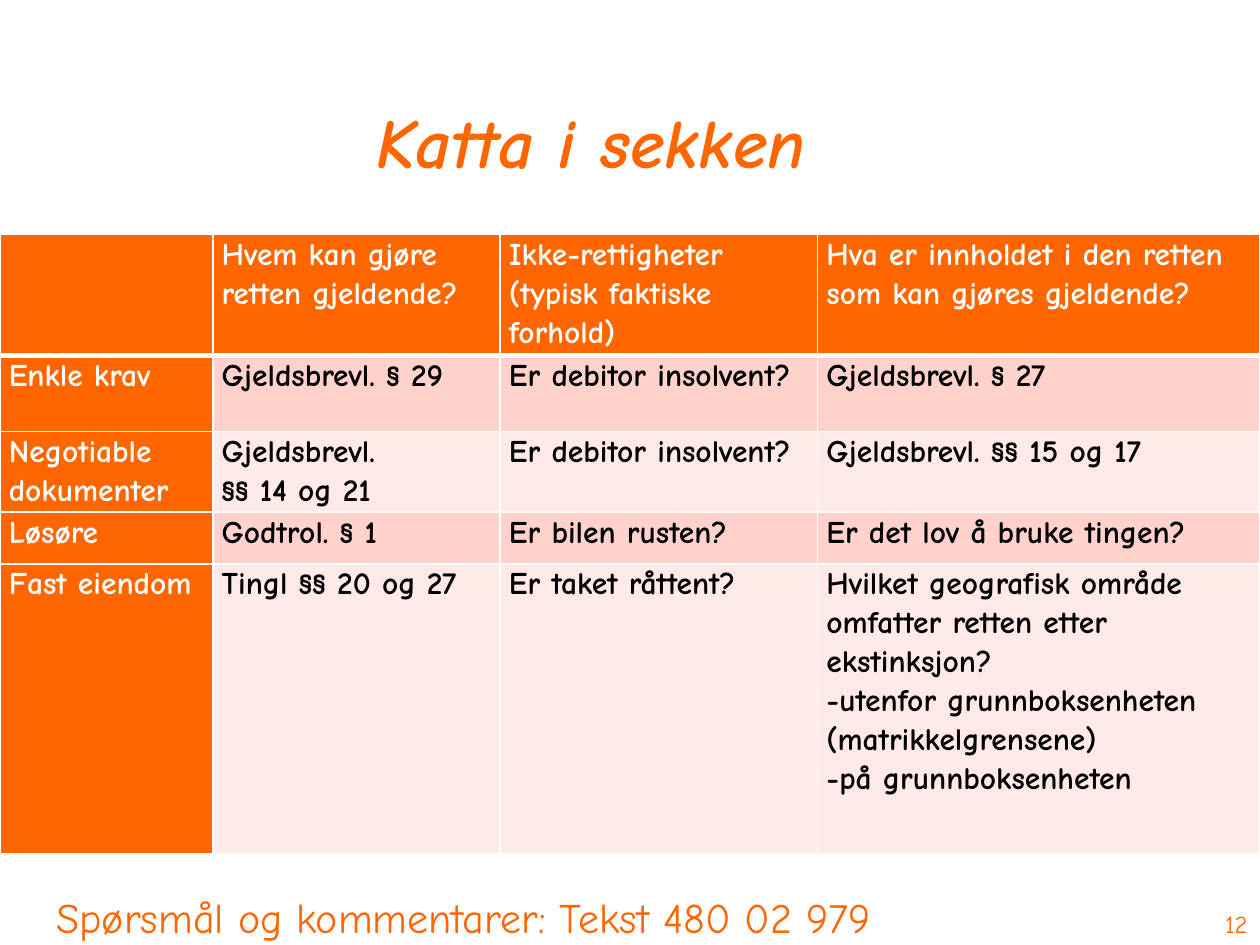
from lxml import etree
from pptx import Presentation
from pptx.dml.color import RGBColor
from pptx.enum.text import MSO_ANCHOR as Anchor, PP_ALIGN as Align
from pptx.oxml.ns import qn
from pptx.util import Inches, Pt

ORANGE = RGBColor(0xFF, 0x66, 0x00)
PINK = RGBColor(0xFF, 0xD3, 0xCC)
PALE_PINK = RGBColor(0xFF, 0xEA, 0xE7)
WHITE = RGBColor(0xFF, 0xFF, 0xFF)
BLACK = RGBColor(0, 0, 0)
FONT = "Comic Neue"

COLUMN_WIDTHS = [1.69, 2.28, 2.52, 3.51]
ROW_HEIGHTS = [0.9, 0.6, 0.6, 0.41, 2.3]
ROWS = [
    ["", "Hvem kan gjøre retten gjeldende?",
     "Ikke-rettigheter (typisk faktiske forhold)",
     "Hva er innholdet i den retten som kan gjøres gjeldende?"],
    ["Enkle krav", "Gjeldsbrevl. § 29", "Er debitor insolvent?", "Gjeldsbrevl. § 27"],
    ["Negotiable dokumenter", "Gjeldsbrevl.\v§§ 14 og 21",
     "Er debitor insolvent?", "Gjeldsbrevl. §§ 15 og 17"],
    ["Løsøre", "Godtrol. § 1", "Er bilen rusten?", "Er det lov å bruke tingen?"],
    ["Fast eiendom", "Tingl §§ 20 og 27", "Er taket råttent?",
     "Hvilket geografisk område omfatter retten etter ekstinksjon?\n"
     "-utenfor grunnboksenheten (matrikkelgrensene)\n"
     "-på grunnboksenheten"],
]


def style_font(para, size, color, bold=False, italic=False):
    font = para.font
    font.name, font.size = FONT, Pt(size)
    font.bold, font.italic = bold, italic
    font.color.rgb = color


def add_label(page, box, text, size, align=Align.LEFT, anchor=Anchor.TOP, **style):
    frame = page.shapes.add_textbox(*map(Inches, box)).text_frame
    frame.word_wrap = True
    frame.vertical_anchor = anchor
    para = frame.paragraphs[0]
    para.text = text
    para.alignment = align
    style_font(para, size, ORANGE, **style)


def add_borders(cell, bottom_width):
    properties = cell._tc.get_or_add_tcPr()
    for side, width in (("lnL", 1), ("lnR", 1), ("lnT", 1), ("lnB", bottom_width)):
        line = etree.SubElement(properties, qn(f"a:{side}"), w=str(Pt(width)))
        fill = etree.SubElement(line, qn("a:solidFill"))
        etree.SubElement(fill, qn("a:srgbClr"), val=str(WHITE))


def fill_cell(cell, text, fill, color, bottom_width):
    add_borders(cell, bottom_width)
    cell.fill.solid()
    cell.fill.fore_color.rgb = fill
    cell.margin_left = cell.margin_right = Inches(0.07)
    cell.margin_top = cell.margin_bottom = 0
    cell.text = text
    for para in cell.text_frame.paragraphs:
        para.line_spacing = 1.07
        style_font(para, 18, color, bold=True)


def add_rights_table(page, box):
    table = page.shapes.add_table(
        len(ROWS), len(COLUMN_WIDTHS), *map(Inches, box)).table
    table.horz_banding = False
    for column, width in zip(table.columns, COLUMN_WIDTHS):
        column.width = Inches(width)
    for row, height in zip(table.rows, ROW_HEIGHTS):
        row.height = Inches(height)
    for r, texts in enumerate(ROWS):
        for c, text in enumerate(texts):
            heading = r == 0 or c == 0
            band = PINK if r % 2 else PALE_PINK
            fill_cell(table.cell(r, c), text,
                      ORANGE if heading else band,
                      WHITE if heading else BLACK,
                      3 if r == 0 else 1)


def main():
    deck = Presentation()
    deck.slide_width, deck.slide_height = Inches(10), Inches(7.5)
    page = deck.slides.add_slide(deck.slide_layouts[6])
    add_label(page, (0.35, 7.03, 7.72, 0.5),
              "Spørsmål og kommentarer: Tekst 480 02 979", 24)
    add_label(page, (0.44, 0.25, 8.5, 1.25), "Katta i sekken", 40,
              Align.CENTER, Anchor.BOTTOM, bold=True, italic=True)
    add_label(page, (9.33, 6.99, 0.67, 0.51), "12", 14, Align.RIGHT, Anchor.BOTTOM)
    add_rights_table(page, (0, 1.86, sum(COLUMN_WIDTHS), sum(ROW_HEIGHTS)))
    deck.save("out.pptx")


if __name__ == "__main__":
    main()
